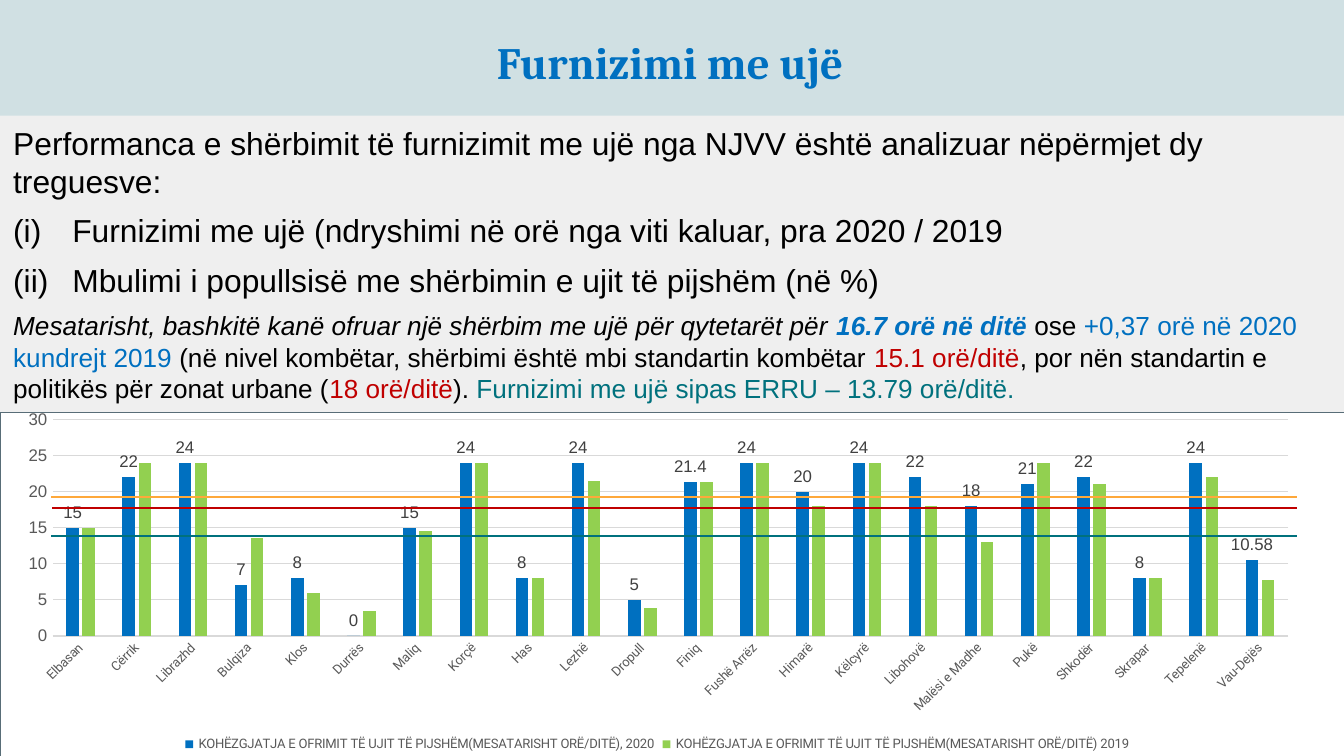
"""Build the water supply slide with its clustered column chart."""
from lxml import etree
from pptx import Presentation
from pptx.chart.data import CategoryChartData
from pptx.dml.color import RGBColor
from pptx.enum.chart import XL_CHART_TYPE as ChartType, XL_LABEL_POSITION as LabelPosition
from pptx.enum.chart import XL_LEGEND_POSITION as LegendPosition, XL_TICK_MARK as TickMark
from pptx.enum.shapes import MSO_CONNECTOR as Connector, MSO_SHAPE as Shape
from pptx.enum.text import MSO_ANCHOR as Anchor, PP_ALIGN as Align
from pptx.oxml import parse_xml
from pptx.oxml.ns import nsdecls, qn
from pptx.util import Inches, Pt

COLORS = {
    name: RGBColor.from_string(value)
    for name, value in {
        "background": "D0E0E3", "panel": "EFEFEF", "white": "FFFFFF", "frame": "586D77",
        "black": "000000", "blue": "0070C0", "red": "C00000", "teal": "00717D",
        "orange": "FEA83A", "green": "92D050", "grid": "D9D9D9", "axis": "595959",
        "label": "404040",
    }.items()
}


def style_font(font, size, color="black", name="Arial", bold=False, italic=False):
    font.size = Pt(size)
    font.name = name
    font.bold = bold
    font.italic = italic
    font.color.rgb = COLORS[color]


def add_span(para, text, size=14, **style):
    span = para.add_run()
    span.text = text
    style_font(span.font, size, **style)


deck = Presentation()
deck.slide_width, deck.slide_height = Inches(10), Inches(10 * 9 / 16)
page = deck.slides.add_slide(deck.slide_layouts[6])
page.background.fill.solid()
page.background.fill.fore_color.rgb = COLORS["background"]

panel = page.shapes.add_shape(Shape.RECTANGLE, 0, Inches(0.86), Inches(10), Inches(4.06))
panel.shadow.inherit = False
panel.fill.solid()
panel.fill.fore_color.rgb = COLORS["panel"]
panel.line.fill.background()

title = page.shapes.add_textbox(Inches(0.19), Inches(0.1), Inches(9.59), Inches(0.72))
body = page.shapes.add_textbox(0, Inches(0.82), Inches(10), Inches(4.32))
for box in (title, body):
    frame = box.text_frame
    frame.word_wrap = True
    frame.margin_left = frame.margin_right = Inches(0.1)
    frame.margin_top = frame.margin_bottom = Inches(0.1)

title.text_frame.vertical_anchor = Anchor.MIDDLE
para = title.text_frame.paragraphs[0]
para.alignment = Align.CENTER
add_span(para, "Furnizimi me ujë", size=24, color="blue", name="Cambria", bold=True)

para = body.text_frame.paragraphs[0]
para.space_after = Pt(6)
add_span(para, "Performanca e shërbimit të furnizimit me ujë nga NJVV është "
               "analizuar nëpërmjet dy treguesve:", size=17)

for indicator in (
    "Furnizimi me ujë (ndryshimi në orë nga viti kaluar, pra 2020 / 2019",
    "Mbulimi i popullsisë me shërbimin e ujit të pijshëm (në %)",
):
    para = body.text_frame.add_paragraph()
    para.space_after = Pt(6)
    add_span(para, indicator, size=17)
    properties = para._p.get_or_add_pPr()
    properties.set("marL", str(Inches(0.44)))
    properties.set("indent", str(-Inches(0.44)))
    bullet = etree.SubElement(properties, qn("a:buAutoNum"))
    bullet.set("type", "romanLcParenBoth")

para = body.text_frame.add_paragraph()
for text, style in (
    ("Mesatarisht, bashkitë kanë ofruar një shërbim me ujë për qytetarët për ", {"italic": True}),
    ("16.7 orë në ditë ", {"color": "blue", "bold": True, "italic": True}),
    ("ose ", {}),
    ("+0,37 orë në 2020 kundrejt 2019 ", {"color": "blue"}),
    ("(në nivel kombëtar, shërbimi është mbi standartin kombëtar ", {}),
    ("15.1 orë/ditë", {"color": "red"}),
    (", por nën standartin e politikës për zonat urbane (", {}),
    ("18 orë/ditë", {"color": "red"}),
    ("). ", {}),
    ("Furnizimi me ujë sipas ERRU – 13.79 orë/ditë.", {"color": "teal"}),
):
    add_span(para, text, **style)

chart_panel = page.shapes.add_shape(Shape.RECTANGLE, 0, Inches(3.07), Inches(10), Inches(2.56))
chart_panel.shadow.inherit = False
chart_panel.fill.solid()
chart_panel.fill.fore_color.rgb = COLORS["white"]
chart_panel.line.color.rgb = COLORS["frame"]
chart_panel.line.width = Pt(0.25)

hours = (
    ("Elbasan", 15, 15), ("Cërrik", 22, 24), ("Librazhd", 24, 24), ("Bulqiza", 7, 13.5),
    ("Klos", 8, 6), ("Durrës", 0, 3.5), ("Maliq", 15, 14.5), ("Korçë", 24, 24),
    ("Has", 8, 8), ("Lezhë", 24, 21.5), ("Dropull", 5, 3.9), ("Finiq", 21.4, 21.4),
    ("Fushë Arrëz", 24, 24), ("Himarë", 20, 18), ("Këlcyrë", 24, 24), ("Libohovë", 22, 18),
    ("Malësi e Madhe", 18, 13), ("Pukë", 21, 24), ("Shkodër", 22, 21), ("Skrapar", 8, 8),
    ("Tepelenë", 24, 22), ("Vau-Dejës", 10.58, 7.7),
)
towns, hours_2020, hours_2019 = zip(*hours)
measure = "KOHËZGJATJA E OFRIMIT TË UJIT TË PIJSHËM(MESATARISHT ORË/DITË)"
data = CategoryChartData()
data.categories = towns
data.add_series(f"{measure}, 2020", hours_2020)
data.add_series(f"{measure} 2019", hours_2019)
chart = page.shapes.add_chart(ChartType.COLUMN_CLUSTERED, 0, Inches(2.99),
                              Inches(9.78), Inches(2.64), data).chart
style_font(chart.font, 10)
chart.has_title = False
chart.has_legend = True
chart.legend.position = LegendPosition.BOTTOM
chart.legend.include_in_layout = False
style_font(chart.legend.font, 7, "axis", "Roboto")

plot = chart.plots[0]
plot.vary_by_categories = False
plot.gap_width = 219
plot.overlap = -27
for series, color in zip(plot.series, ("blue", "green")):
    series.format.fill.solid()
    series.format.fill.fore_color.rgb = COLORS[color]
    series.invert_if_negative = False
labels = plot.series[0].data_labels
labels.show_value = True
labels.position = LabelPosition.OUTSIDE_END
style_font(labels.font, 9, "label")

towns_axis, hours_axis = chart.category_axis, chart.value_axis
for axis in (towns_axis, hours_axis):
    axis.major_tick_mark = axis.minor_tick_mark = TickMark.NONE
style_font(towns_axis.tick_labels.font, 7, "axis", "Roboto")
style_font(hours_axis.tick_labels.font, 9, "axis")
towns_axis._element.find(qn("c:txPr")).find(qn("a:bodyPr")).set("rot", "-2700000")
hours_axis.minimum_scale, hours_axis.maximum_scale, hours_axis.major_unit = 0, 30, 5
hours_axis.format.line.fill.background()
for line in (towns_axis.format.line, hours_axis.major_gridlines.format.line):
    line.color.rgb = COLORS["grid"]
    line.width = Pt(0.75)

plot_area = chart._chartSpace.chart.plotArea
for layout in plot_area.findall(qn("c:layout")):
    plot_area.remove(layout)
plot_area.insert(0, parse_xml(
    f'<c:layout {nsdecls("c")}><c:manualLayout><c:layoutTarget val="inner"/>'
    '<c:xMode val="edge"/><c:yMode val="edge"/><c:x val="0.04"/><c:y val="0.05"/>'
    '<c:w val="0.94"/><c:h val="0.61"/></c:manualLayout></c:layout>'))

for left, top, color in ((0.39, 3.78, "red"), (0.38, 3.7, "orange"), (0.38, 3.99, "teal")):
    standard = page.shapes.add_connector(Connector.STRAIGHT, Inches(left), Inches(top),
                                         Inches(9.65), Inches(top))
    standard.line.color.rgb = COLORS[color]
    standard.line.width = Pt(1.25)
    etree.SubElement(standard._element.spPr, qn("a:effectLst"))

deck.save("out.pptx")
